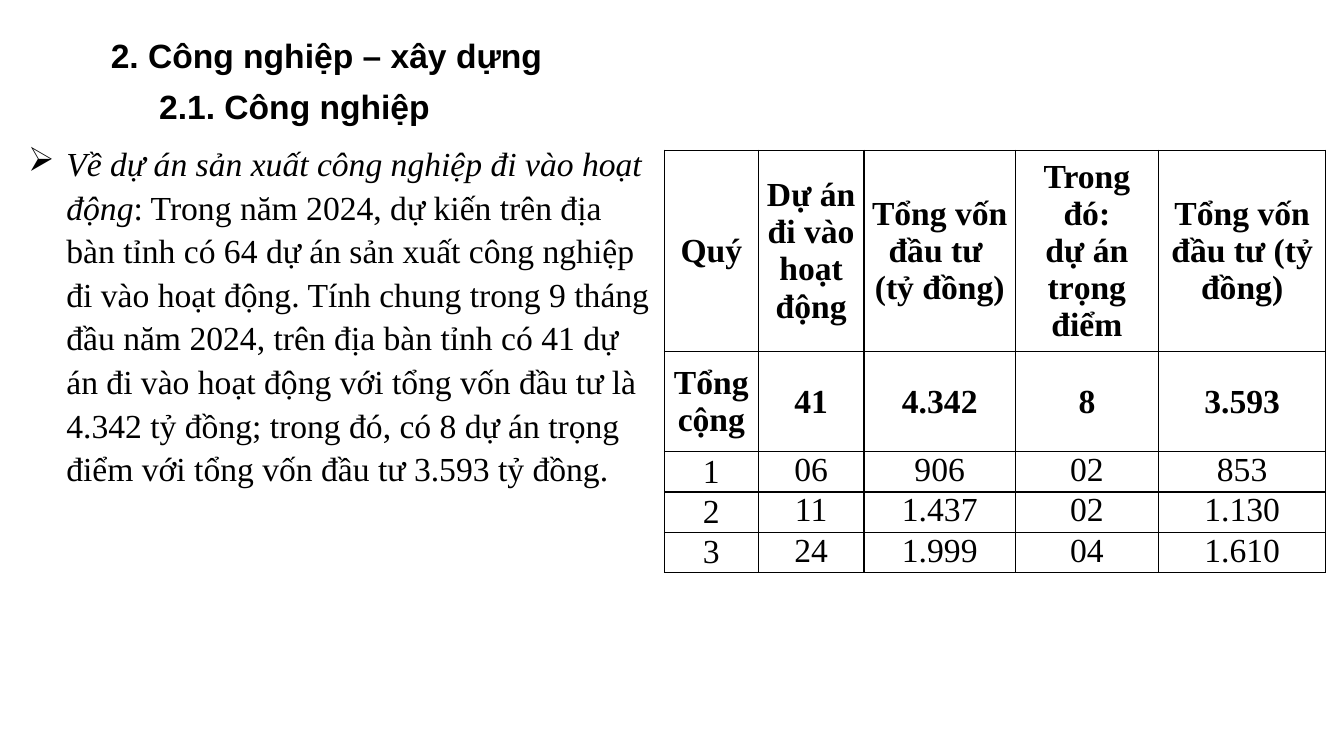
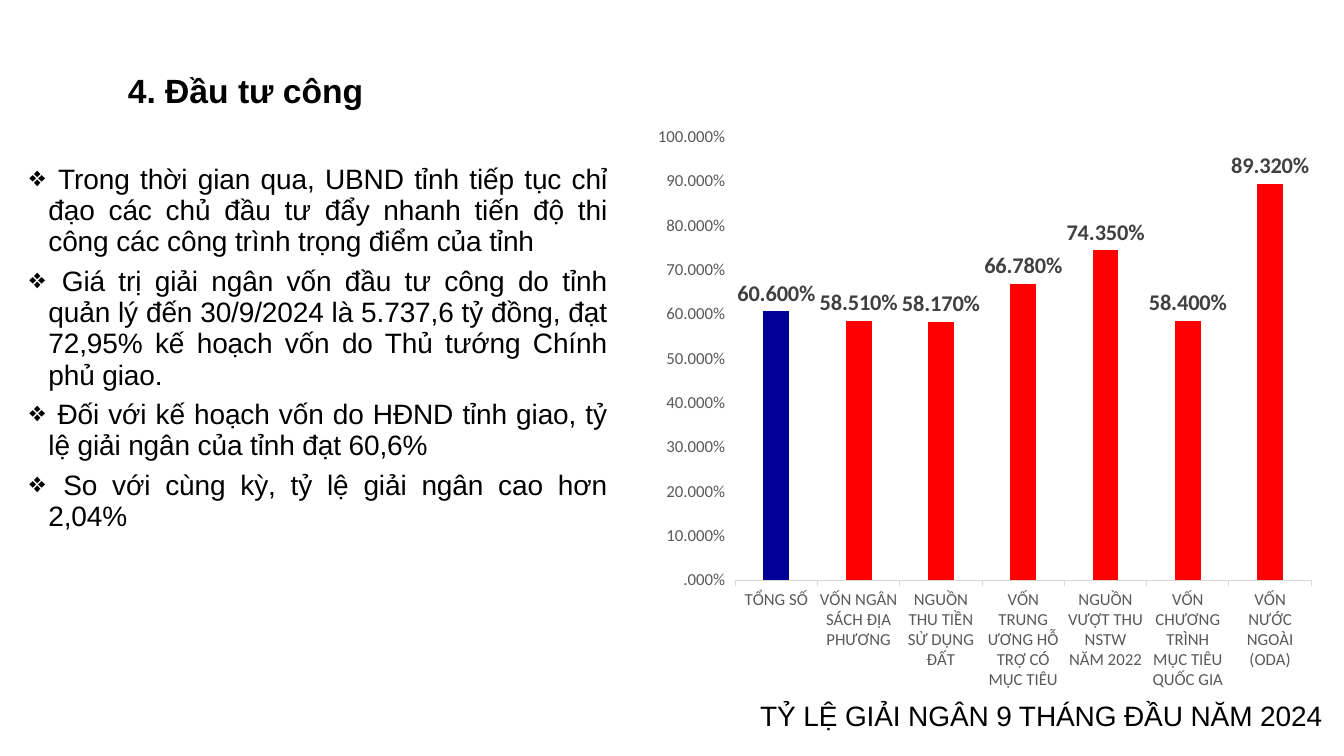
from dataclasses import dataclass

from lxml import etree
from pptx import Presentation
from pptx.chart.data import CategoryChartData
from pptx.dml.color import RGBColor
from pptx.enum import chart as ch
from pptx.enum.text import MSO_ANCHOR, PP_ALIGN
from pptx.oxml import ns
from pptx.util import Inches, Pt


@dataclass(frozen=True)
class Theme:
    black: RGBColor = RGBColor(0, 0, 0)
    axis_text: RGBColor = RGBColor(0x59, 0x59, 0x59)
    axis_line: RGBColor = RGBColor(0xD9, 0xD9, 0xD9)
    label_text: RGBColor = RGBColor(0x40, 0x40, 0x40)
    bar: RGBColor = RGBColor(0xFF, 0, 0)
    total_bar: RGBColor = RGBColor(0, 0, 0x99)
    sans: str = "Arial"
    serif: str = "Times New Roman"
    chart_font: str = "Calibri"
    large: int = 24
    medium: int = 20
    label: int = 16
    axis: int = 12


theme = Theme()


def write(paragraph, content, font, size, bold=False, italic=False, bullet=None, indent=0, spacing=0):
    """Add a run per line of content, with an optional bullet and letter spacing in 1/100 pt."""
    for position, line in enumerate(content.split("\n")):
        if position:
            paragraph.add_line_break()
        run = paragraph.add_run()
        run.text = line
        run.font.name, run.font.size = font, Pt(size)
        run.font.bold, run.font.italic = bold, italic
        run.font.color.rgb = theme.black
        if spacing:
            run.font._element.set("spc", str(spacing))
    if bullet:
        properties = paragraph._p.get_or_add_pPr()
        properties.set("marL", str(Inches(indent)))
        properties.set("indent", str(-Inches(indent)))
        etree.SubElement(properties, ns.qn("a:buChar")).set("char", bullet)


def add_grid(slide, left, top, widths, heights, bordered=False):
    """Add an unfilled table, with black cell borders if asked, and return it."""
    grid = slide.shapes.add_table(len(heights), len(widths), Inches(left), Inches(top),
                                  Inches(sum(widths)), Inches(sum(heights))).table
    grid.first_row = grid.horz_banding = False
    for column, width in zip(grid.columns, widths):
        column.width = Inches(width)
    for row, height in zip(grid.rows, heights):
        row.height = Inches(height)
    for cell in grid.iter_cells():
        cell.vertical_anchor = MSO_ANCHOR.MIDDLE
        properties = cell._tc.get_or_add_tcPr()
        for side in ("lnL", "lnR", "lnT", "lnB") if bordered else ():
            line = etree.SubElement(properties, ns.qn(f"a:{side}"), w=str(Pt(1)))
            solid = etree.SubElement(line, ns.qn("a:solidFill"))
            etree.SubElement(solid, ns.qn("a:srgbClr"), val=str(theme.black))
        cell.fill.background()
    return grid


prs = Presentation()
prs.slide_width, prs.slide_height = Inches(13.33), Inches(7.5)
industry = prs.slides.add_slide(prs.slide_layouts[6])
investment = prs.slides.add_slide(prs.slide_layouts[6])

# Headings
for slide, heading, left, top, width, height in (
    (industry, "2.1. Công nghiệp", 1.48, 0.8, 3.77, 0.5),
    (industry, "2. Công nghiệp – xây dựng", 1, 0.3, 5.59, 0.5),
    (investment, "4. Đầu tư công", 1.17, 0.64, 11.4, 0.91),
):
    frame = slide.shapes.add_textbox(Inches(left), Inches(top), Inches(width), Inches(height)).text_frame
    frame.word_wrap = True
    write(frame.paragraphs[0], heading, theme.sans, theme.large, bold=True)

# Industry: projects by quarter
quarters = (
    ("Quý", "Dự án đi vào hoạt động", "Tổng vốn đầu tư \n(tỷ đồng)",
     "Trong đó:\n dự án \ntrọng điểm", "Tổng vốn đầu tư (tỷ đồng)"),
    ("Tổng cộng", "41", "4.342", "8", "3.593"),
    ("1", "06", "906", "02", "853"),
    ("2", "11", "1.437", "02", "1.130"),
    ("3", "24", "1.999", "04", "1.610"),
)
projects = add_grid(industry, 6.59, 1.49, (0.93, 1.05, 1.5, 1.42, 1.66),
                    (2, 0.99, 0.4, 0.4, 0.4), bordered=True)
for r, values in enumerate(quarters):
    for c, value in enumerate(values):
        cell = projects.cell(r, c)
        cell.margin_left = cell.margin_right = Inches(0.07)
        cell.margin_top = cell.margin_bottom = 0
        if r > 1 and c > 0:
            cell.vertical_anchor = MSO_ANCHOR.TOP
        paragraph = cell.text_frame.paragraphs[0]
        paragraph.alignment = PP_ALIGN.CENTER
        write(paragraph, value, theme.serif, theme.large, bold=r < 2)

# Industry: commentary
frame = industry.shapes.add_textbox(Inches(0.18), Inches(1.34), Inches(6.42), Inches(3.33)).text_frame
frame.word_wrap = True
commentary = frame.paragraphs[0]
commentary.line_spacing = 1.08
write(commentary, "Về dự án sản xuất công nghiệp đi vào hoạt động", theme.serif, theme.large,
      italic=True, bullet="➢", indent=0.38)
write(commentary, ": Trong năm 2024, dự kiến trên địa bàn tỉnh có 64 dự án sản xuất công nghiệp "
      "đi vào hoạt động. Tính chung trong 9 tháng đầu năm 2024, trên địa bàn tỉnh có 41 dự án "
      "đi vào hoạt động với tổng vốn đầu tư là 4.342 tỷ đồng; trong đó, có 8 dự án trọng điểm "
      "với tổng vốn đầu tư 3.593 tỷ đồng.", theme.serif, theme.large)

# Investment: key points
points = (
    " Trong thời gian qua, UBND tỉnh tiếp tục chỉ đạo các chủ đầu tư đẩy nhanh tiến độ "
    "thi công các công trình trọng điểm của tỉnh",
    " Giá trị giải ngân vốn đầu tư công do tỉnh quản lý đến 30/9/2024 là 5.737,6 tỷ đồng, "
    "đạt 72,95% kế hoạch vốn do Thủ tướng Chính phủ giao.",
    " Đối với kế hoạch vốn do HĐND tỉnh giao, tỷ lệ giải ngân của tỉnh đạt 60,6%",
    " So với cùng kỳ, tỷ lệ giải ngân cao hơn 2,04%",
)
frame = add_grid(investment, 0.19, 1.38, (5.93,), (4.15,)).cell(0, 0).text_frame
for position, point in enumerate(points):
    paragraph = frame.add_paragraph() if position else frame.paragraphs[0]
    paragraph.alignment = PP_ALIGN.JUSTIFY
    paragraph.space_after = Pt(6)
    write(paragraph, point, theme.sans, theme.medium, bullet="❖", indent=0.19, spacing=-10)

# Investment: disbursement rates
rates = {
    "TỔNG SỐ": 0.606,
    "VỐN NGÂN SÁCH ĐỊA PHƯƠNG": 0.5851,
    "NGUỒN THU TIỀN SỬ DỤNG ĐẤT": 0.5817,
    "VỐN TRUNG ƯƠNG HỖ TRỢ CÓ MỤC TIÊU": 0.6678,
    "NGUỒN VƯỢT THU NSTW NĂM 2022": 0.7435,
    "VỐN CHƯƠNG TRÌNH MỤC TIÊU QUỐC GIA": 0.584,
    "VỐN NƯỚC NGOÀI (ODA)": 0.8932,
}
percent = "#.000%"
data = CategoryChartData(number_format=percent)
data.categories = list(rates)
data.add_series("Series 1", list(rates.values()))
chart = investment.shapes.add_chart(ch.XL_CHART_TYPE.COLUMN_CLUSTERED, Inches(6.39), Inches(1.14),
                                    Inches(6.75), Inches(5.82), data).chart
chart.has_title = chart.has_legend = False
chart.font.name, chart.font.size = theme.chart_font, Pt(theme.axis)
for axis in (chart.category_axis, chart.value_axis):
    axis.has_major_gridlines = False
    axis.major_tick_mark = ch.XL_TICK_MARK.OUTSIDE
    axis.tick_labels.font.name = theme.chart_font
    axis.tick_labels.font.size = Pt(theme.axis)
    axis.tick_labels.font.color.rgb = theme.axis_text
chart.category_axis.format.line.color.rgb = theme.axis_line
chart.category_axis.format.line.width = Pt(0.75)
chart.value_axis.format.line.fill.background()
chart.value_axis.minimum_scale, chart.value_axis.maximum_scale = 0, 1
chart.value_axis.major_unit = 0.1
chart.value_axis.tick_labels.number_format = percent
chart.value_axis.tick_labels.number_format_is_linked = False

plot = chart.plots[0]
plot.vary_by_categories = False
plot.gap_width, plot.overlap = 219, -27
bars = plot.series[0]
bars.invert_if_negative = False
for fill, color in ((bars.format.fill, theme.bar), (bars.points[0].format.fill, theme.total_bar)):
    fill.solid()
    fill.fore_color.rgb = color
labels = bars.data_labels
labels.show_value = True
labels.position = ch.XL_LABEL_POSITION.OUTSIDE_END
labels.number_format, labels.number_format_is_linked = percent, False
labels.font.name, labels.font.size, labels.font.bold = theme.chart_font, Pt(theme.label), True
labels.font.color.rgb = theme.label_text

# Investment: chart caption
cell = add_grid(investment, 7.35, 6.86, (5.97,), (0.5,)).cell(0, 0)
cell.margin_left = Inches(0.19)
caption = cell.text_frame.paragraphs[0]
caption.alignment = PP_ALIGN.JUSTIFY
write(caption, "TỶ LỆ GIẢI NGÂN 9 THÁNG ĐẦU NĂM 2024", theme.sans, theme.medium, spacing=-10)

prs.save("out.pptx")
